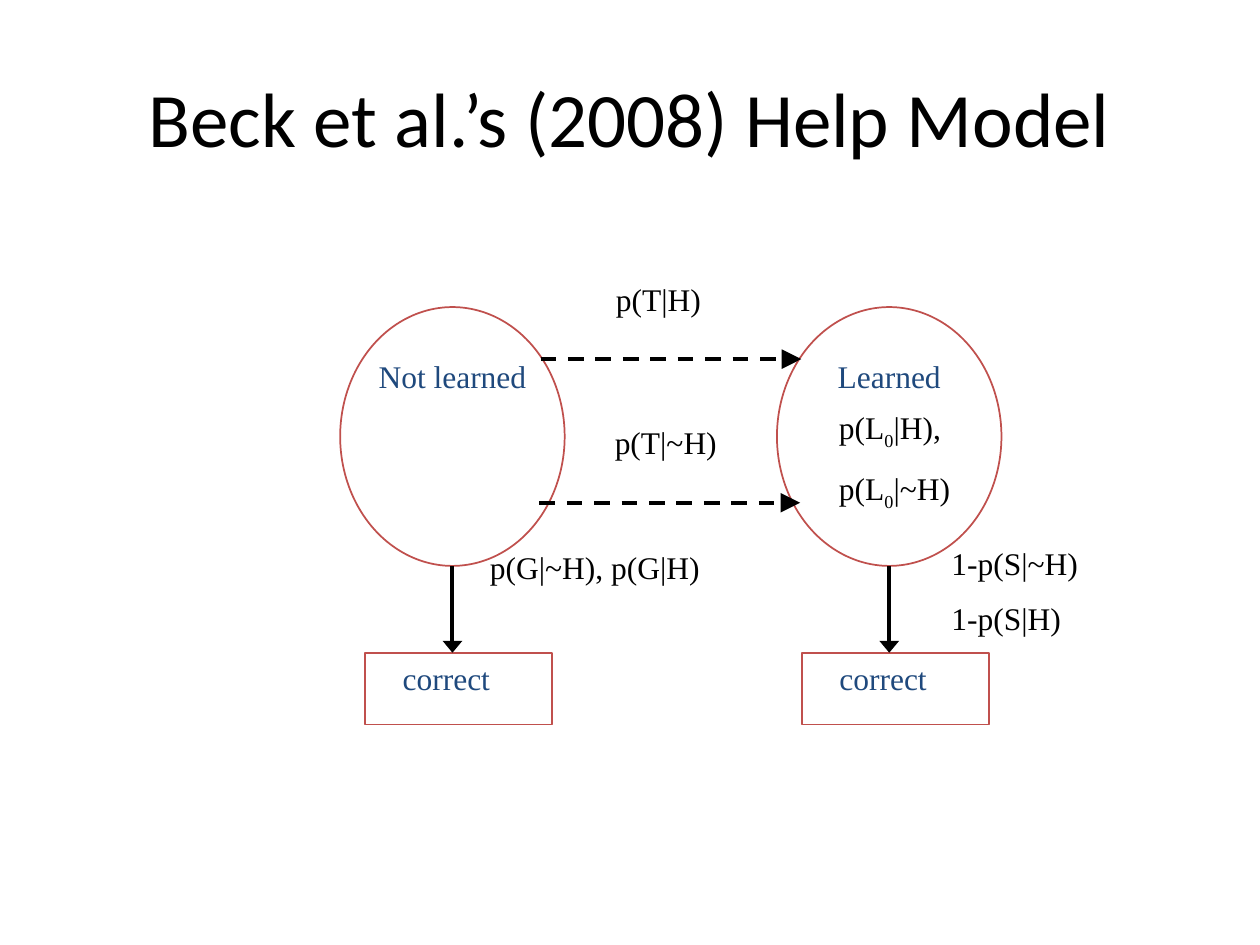
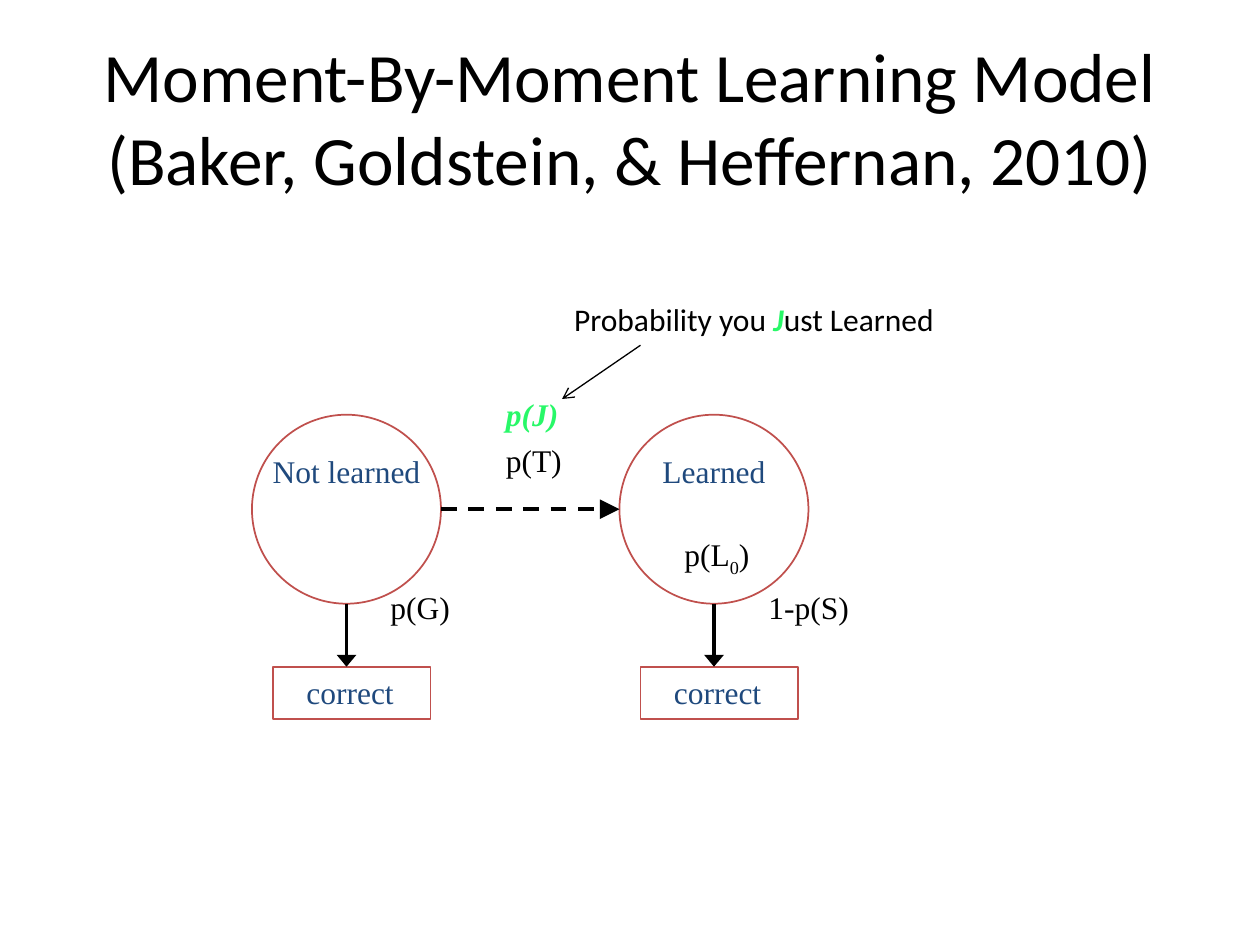
from dataclasses import dataclass
from lxml import etree
from pptx import Presentation
from pptx.dml.color import RGBColor
from pptx.enum import dml, shapes, text
from pptx.oxml import ns
from pptx.util import Pt


@dataclass(frozen=True)
class Theme:
    ink: str = "000000"
    blue: str = "1F497D"
    red: str = "C0504D"
    green: str = "28F868"
    sans: str = "Calibri"
    serif: str = "Times New Roman"
    body: float = 18
    edge: float = 1
    bold: float = 2.25
    thin: float = 0.75
    gap: float = 10


T = Theme()

# Content: a run is a string or (string, style); a label is (x, y, width, paragraphs)
STATES = ["Not learned", "Learned"]
RESULT = "correct"
SUB = ("0", "sub")

MODELS = [
    dict(
        title=["Beck et al.’s (2008) Help Model"], size=44,
        state=(194.4, 175.5, 128.3, 147.9), step=249.6, inset=14.3,
        name=24.7, result=(373, 41),
        moves=[(308.9, 457.9, 205.2), (308.2, 457.2, 287.3)],
        labels=[
            (344.9, 156.2, 86, [["p(T|H)"]]),
            (344.2, 238.3, 107, [["p(T|~H)"]]),
            (272.9, 309.6, 143, [["p(G|~H), p(G|H)"]]),
            (536.6, 307.4, 135, [["1-p(S|~H)"], ["1-p(S|H)"]]),
            (472.3, 229.7, 132,
             [["p(L", SUB, "|H),"], ["p(L", SUB, "|~H)"]]),
        ],
    ),
    dict(
        title=["Moment-By-Moment Learning Model",
               "(Baker, Goldstein, & Heffernan, 2010)"], size=39.6,
        state=(144, 237, 108, 108), step=210, inset=12,
        name=18, result=(381, 30),
        moves=[(252, 354, 291)],
        labels=[
            (282, 248.4, 50, [["p(T)"]]),
            (216, 332.4, 54, [["p(G)"]]),
            (432, 332.4, 84, [["1-p(S)"]]),
            (384, 302.4, 72, [["p(L", SUB, ")"]]),
            (282, 222, 50, [[("p(J)", "key")]]),
        ],
        note=(321, 168, 280,
              [["Probability you ", ("J", "key"), "ust Learned"]]),
        hint=(366, 197.3, 321.2, 228),
    ),
]


def paint(font, face, size, color):
    font.name, font.size = face, Pt(size)
    font.color.rgb = RGBColor.from_string(color)


def add_run(para, item, face, size, color):
    words, style = item if isinstance(item, tuple) else (item, None)
    run = para.add_run()
    run.text = words
    paint(run.font, face, size, T.green if style == "key" else color)
    if style == "key":
        run.font.bold = run.font.italic = True
    elif style == "sub":
        run.font._element.set("baseline", "-25000")


def add_label(slide, x, y, width, paras, color=T.ink, face=T.serif,
              align=text.PP_ALIGN.LEFT):
    box = slide.shapes.add_textbox(Pt(x), Pt(y), Pt(width), Pt(29))
    frame = box.text_frame
    frame.word_wrap = True
    for i, runs in enumerate(paras):
        para = frame.add_paragraph() if i else frame.paragraphs[0]
        para.alignment = align
        if i:
            para.space_before = Pt(T.gap)
        for item in runs:
            add_run(para, item, face, T.body, color)


def add_node(slide, kind, *place):
    node = slide.shapes.add_shape(kind, *map(Pt, place))
    node.shadow.inherit = False
    node.fill.background()
    node.line.color.rgb = RGBColor.from_string(T.red)
    node.line.width = Pt(T.edge)


def add_arrow(slide, ends, width=T.bold, head="triangle", span="lg",
              length="lg", dash=False):
    link = slide.shapes.add_connector(
        shapes.MSO_CONNECTOR.STRAIGHT, *map(Pt, ends))
    line = link.line
    line.color.rgb = RGBColor.from_string(T.ink)
    line.width = Pt(width)
    if dash:
        line.dash_style = dml.MSO_LINE.DASH
    etree.SubElement(line._get_or_add_ln(), ns.qn("a:tailEnd"),
                     type=head, w=span, len=length)
    etree.SubElement(link._element.spPr, ns.qn("a:effectLst"))


def add_title(slide, lines, size):
    title = slide.shapes.title
    title.left, title.top, title.width, title.height = map(
        Pt, (36, 21.6, 648, 90))
    frame = title.text_frame
    frame.auto_size = text.MSO_AUTO_SIZE.NONE
    frame.vertical_anchor = text.MSO_ANCHOR.MIDDLE
    para = frame.paragraphs[0]
    para.alignment = text.PP_ALIGN.CENTER
    for i, words in enumerate(lines):
        if i:
            para.add_line_break()
        add_run(para, words, T.sans, size, T.ink)


def add_model(deck, model):
    slide = deck.slides.add_slide(deck.slide_layouts[5])
    add_title(slide, model["title"], model["size"])
    left, top, wide, high = model["state"]
    inset = model["inset"]
    low, tall = model["result"]

    # Each state with its result below
    for i, name in enumerate(STATES):
        x = left + i * model["step"]
        mid = x + wide / 2
        add_node(slide, shapes.MSO_SHAPE.OVAL, x, top, wide, high)
        add_label(slide, x - inset, top + model["name"], wide + 2 * inset,
                  [[name]], T.blue, align=text.PP_ALIGN.CENTER)
        add_node(slide, shapes.MSO_SHAPE.RECTANGLE,
                 x + inset, low, wide - 1.5 * inset, tall)
        add_label(slide, x + 2 * inset, low, wide - 2 * inset,
                  [[RESULT]], T.blue)
        add_arrow(slide, (mid, top + high, mid, low), length="med")

    # Moves between states, and their odds
    for start, end, y in model["moves"]:
        add_arrow(slide, (start, y, end, y), dash=True)
    for label in model["labels"]:
        add_label(slide, *label)

    # Side note
    if "note" in model:
        add_label(slide, *model["note"], face=T.sans)
        add_arrow(slide, model["hint"], T.thin, "arrow", "med", "med")


def main():
    deck = Presentation()
    deck.slide_width, deck.slide_height = Pt(720), Pt(540)
    for model in MODELS:
        add_model(deck, model)
    deck.save("out.pptx")


if __name__ == "__main__":
    main()
